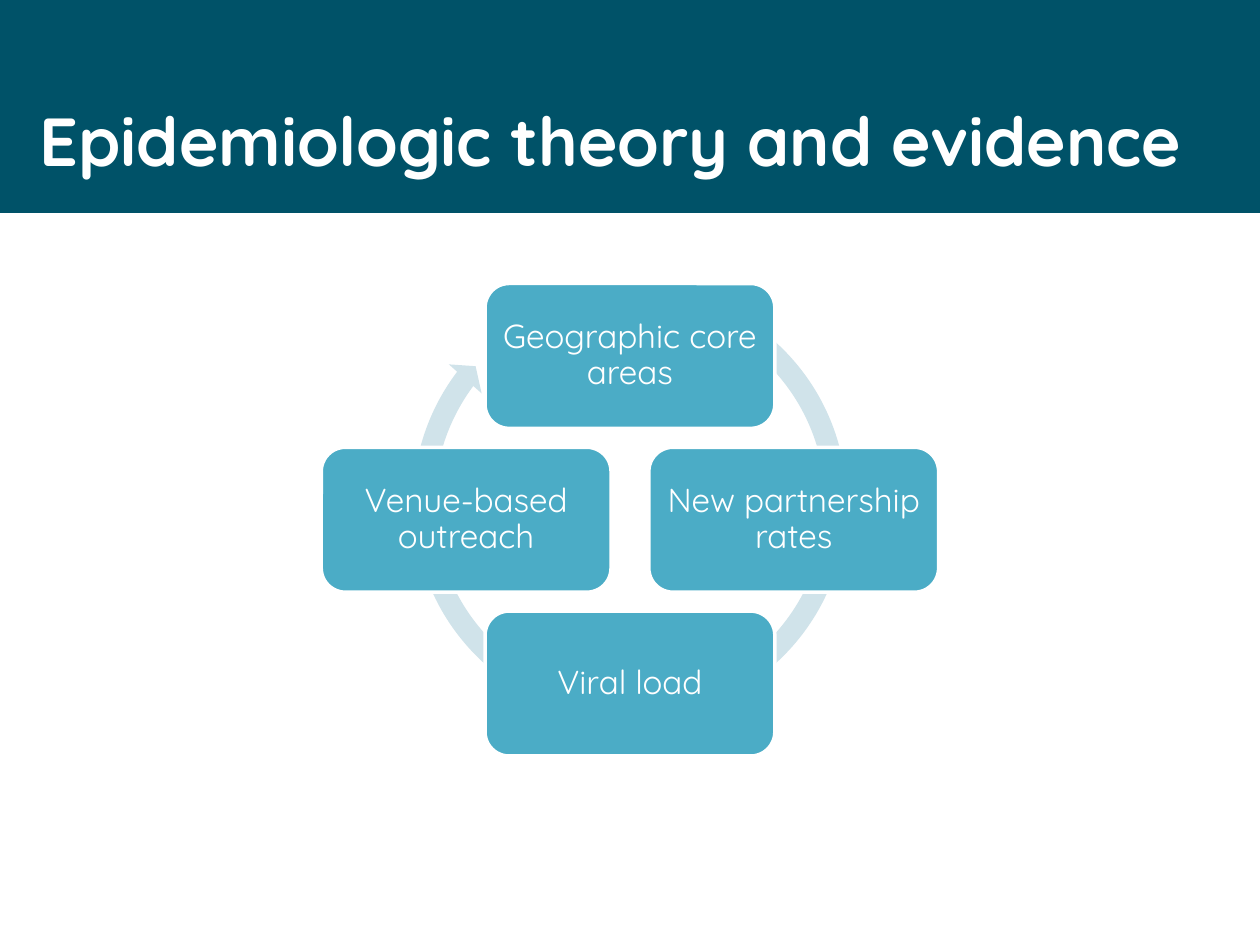
"""Build a slide with a title band and a four-step circular cycle."""
from dataclasses import dataclass

from pptx import Presentation
from pptx.dml.color import RGBColor
from pptx.enum import shapes, text
from pptx.util import Pt


@dataclass(frozen=True)
class Theme:
    font: str = "Quicksand"
    band: str = "005268"
    step: str = "4BACC6"
    ring: str = "D0E3EA"
    light: str = "FFFFFF"
    title_size: float = 38.8
    step_size: float = 19
    outline: float = 2


@dataclass(frozen=True)
class Box:
    left: float
    top: float
    width: float
    height: float

    def lengths(self) -> tuple:
        return tuple(Pt(v) for v in (self.left, self.top, self.width, self.height))


@dataclass(frozen=True)
class Step:
    label: str
    across: int
    down: int


THEME = Theme()
SLIDE_WIDTH, SLIDE_HEIGHT = 720, 540
BAND = Box(0, 0, SLIDE_WIDTH, 121.7)
TITLE = Box(15.8, 52.6, 700.6, 79.2)
RING = Box(229.7, 157, 260.6, 260.6)
RING_ADJUSTMENTS = (0.047, 2.729, 130.171, 179.056, 0.048)
CENTRE_X, CENTRE_Y = 360, 297
STEP_OFFSET = 93.6
STEP_WIDTH, STEP_HEIGHT = 165.6, 82.8
STEPS = (
    Step("Geographic core areas", 0, -1),
    Step("New partnership rates", 1, 0),
    Step("Viral load", 0, 1),
    Step("Venue-based outreach", -1, 0),
)


def apply(target, values: dict) -> None:
    for name, value in values.items():
        setattr(target, name, value)


def draw_shape(slide, kind, box: Box, fill: str):
    shape = slide.shapes.add_shape(kind, *box.lengths())
    shape.shadow.inherit = False
    shape.fill.solid()
    shape.fill.fore_color.rgb = RGBColor.from_string(fill)
    shape.line.fill.background()
    return shape


def write(frame, wording: str, size: float, bold: bool, frame_format: dict, paragraph_format: dict) -> None:
    apply(frame, {"word_wrap": True, **frame_format})
    paragraph = frame.paragraphs[0]
    apply(paragraph, paragraph_format)
    run = paragraph.add_run()
    run.text = wording
    apply(run.font, {"name": THEME.font, "size": Pt(size), "bold": bold})
    run.font.color.rgb = RGBColor.from_string(THEME.light)


def draw_title(slide, wording: str) -> None:
    draw_shape(slide, shapes.MSO_SHAPE.RECTANGLE, BAND, THEME.band)
    title = slide.shapes.add_textbox(*TITLE.lengths())
    write(title.text_frame, wording, THEME.title_size, True,
          {"vertical_anchor": text.MSO_ANCHOR.TOP}, {"alignment": text.PP_ALIGN.LEFT})


def draw_ring(slide) -> None:
    ring = draw_shape(slide, shapes.MSO_SHAPE.CIRCULAR_ARROW, RING, THEME.ring)
    for index, value in enumerate(RING_ADJUSTMENTS):
        ring.adjustments[index] = value


def draw_step(slide, step: Step) -> None:
    box = Box(CENTRE_X + step.across * STEP_OFFSET - STEP_WIDTH / 2,
              CENTRE_Y + step.down * STEP_OFFSET - STEP_HEIGHT / 2,
              STEP_WIDTH, STEP_HEIGHT)
    card = draw_shape(slide, shapes.MSO_SHAPE.ROUNDED_RECTANGLE, box, THEME.step)
    card.line.color.rgb = RGBColor.from_string(THEME.light)
    card.line.width = Pt(THEME.outline)
    margins = {f"margin_{side}": Pt(5.7) for side in ("left", "top", "right", "bottom")}
    write(card.text_frame, step.label, THEME.step_size, False,
          {"vertical_anchor": text.MSO_ANCHOR.MIDDLE, **margins},
          {"alignment": text.PP_ALIGN.CENTER, "line_spacing": 0.9})


def main() -> None:
    deck = Presentation()
    apply(deck, {"slide_width": Pt(SLIDE_WIDTH), "slide_height": Pt(SLIDE_HEIGHT)})
    slide = deck.slides.add_slide(deck.slide_layouts[6])
    draw_title(slide, "Epidemiologic theory and evidence")
    draw_ring(slide)
    for step in STEPS:
        draw_step(slide, step)
    deck.save("out.pptx")


if __name__ == "__main__":
    main()
